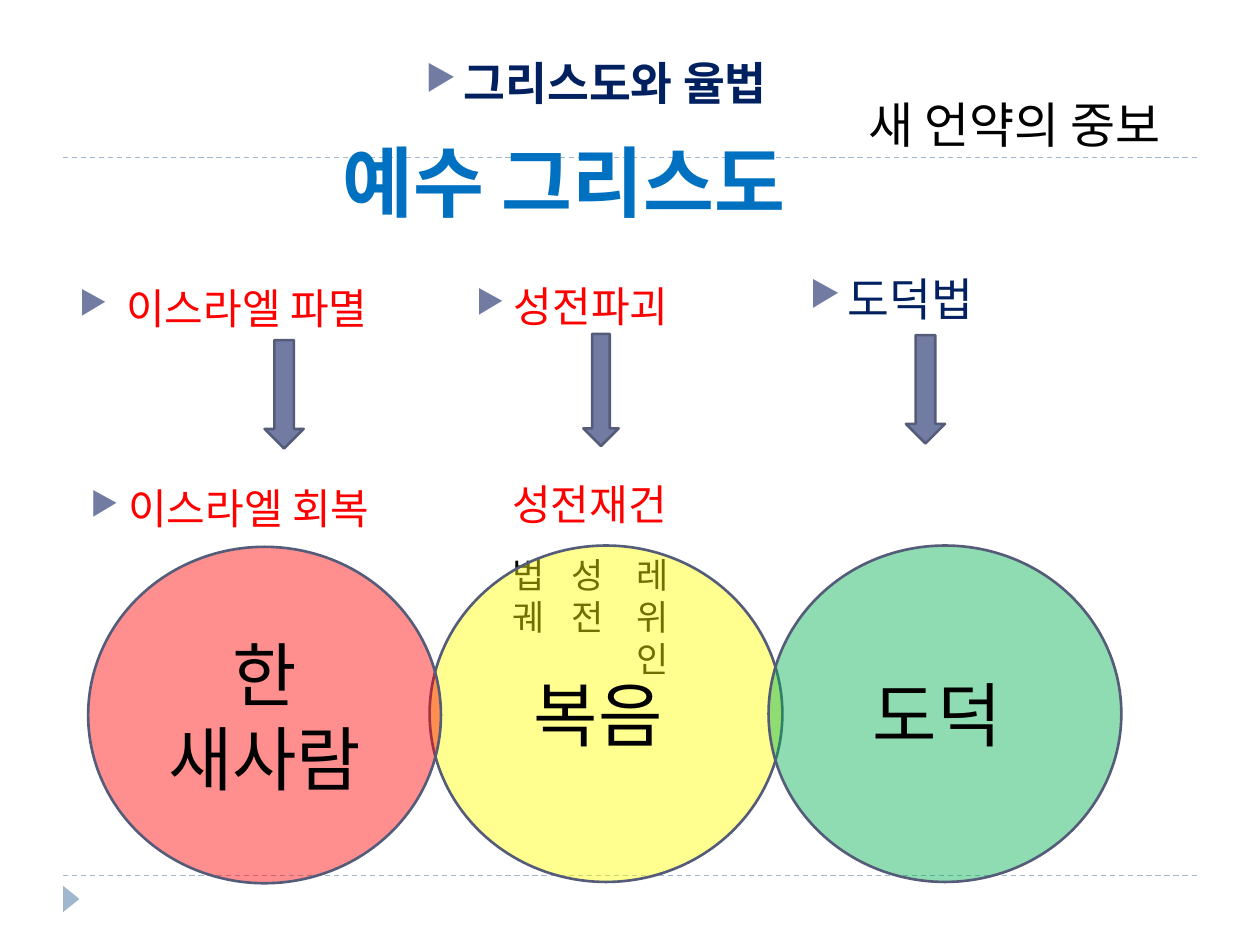
"""Builds a slide on Christ and the law: three changes leading to three overlapping circles."""
from dataclasses import dataclass

from lxml import etree
from pptx import Presentation
from pptx.dml.color import RGBColor
from pptx.enum import dml, shapes, text
from pptx.oxml.ns import qn
from pptx.util import Inches, Pt

FONT = "Calibri"
SLATE, EDGE, PALE = "727CA3", "545C79", "9FB8CD"
NAVY, RED, BLACK, BLUE = "002060", "FF0000", "000000", "0070C0"
CIRCLE_SIZE = (2.8, 2.67)


@dataclass
class Label:
    wording: str
    box: tuple[float, float, float, float]
    size: float
    color: str
    bold: bool = False
    bullet: bool = False
    centered: bool = False
    spacing: float | None = None
    before: float = 0


@dataclass
class Arrow:
    left: float
    top: float
    width: float
    height: float


@dataclass
class Circle:
    wording: str
    left: float
    top: float
    color: str


LABELS = [
    Label("그리스도와 율법", (3.28, 0.39, 3.75, 0.62), 26, NAVY, bold=True, bullet=True, before=6),
    Label("도덕법", (6.33, 2.1, 1.95, 0.62), 26, NAVY, bullet=True, before=6),
    Label("이스라엘 회복", (0.62, 3.78, 2.66, 0.47), 24, RED, bullet=True, before=6),
    Label("성전재건", (3.43, 3.79, 2.5, 0.47), 24, RED, centered=True, spacing=0.9, before=6),
    Label(" 이스라엘 파멸", (0.53, 2.19, 2.81, 0.47), 24, RED, bullet=True, before=6),
    Label("성전파괴", (3.68, 2.18, 2.66, 0.47), 24, RED, bullet=True, before=6),
    Label("법궤", (3.97, 4.34, 0.47, 0.77), 20, BLACK),
    Label("성전", (4.44, 4.34, 0.47, 0.77), 20, BLACK),
    Label("레위인", (4.95, 4.34, 0.63, 1.11), 20, BLACK),
    Label("예수 그리스도", (2.62, 1.02, 4.22, 0.84), 44, BLUE, bold=True),
    Label("새 언약의 중보", (6.57, 0.7, 2.97, 0.57), 28, BLACK, centered=True),
]
ARROWS = [
    Arrow(2.1, 2.7, 0.31, 0.86),
    Arrow(4.63, 2.65, 0.28, 0.89),
    Arrow(7.19, 2.66, 0.31, 0.86),
]
CIRCLES = [
    Circle("복음 ", 3.41, 4.33, "FFFF00"),
    Circle("도덕 ", 6.1, 4.33, "00B050"),
    Circle("한 새사람", 0.7, 4.34, "FF0000"),
]


def rgb(code: str) -> RGBColor:
    """Turn a hex string into a colour."""
    return RGBColor.from_string(code)


def style_paragraph(paragraph, size: float, color: str, bold: bool = False) -> None:
    """Set the font of a whole paragraph."""
    font = paragraph.font
    font.name, font.size, font.bold = FONT, Pt(size), bold
    font.color.rgb = rgb(color)


def add_bullet(paragraph) -> None:
    """Give a paragraph a hanging slate triangle bullet."""
    properties = paragraph._p.get_or_add_pPr()
    properties.set("marL", str(Inches(0.3)))
    properties.set("indent", str(Inches(-0.3)))
    color = etree.Element(qn("a:buClr"))
    etree.SubElement(color, qn("a:srgbClr"), val=SLATE)
    size = etree.Element(qn("a:buSzPct"), val="76000")
    mark = etree.Element(qn("a:buChar"), char="▶")
    for offset, part in enumerate((color, size, mark)):
        properties.insert(len(properties.findall(qn("a:spcBef"))) + offset, part)


def add_label(slide, label: Label) -> None:
    """Draw one text label."""
    frame = slide.shapes.add_textbox(*map(Inches, label.box)).text_frame
    frame.word_wrap = True
    paragraph = frame.paragraphs[0]
    paragraph.text = label.wording
    paragraph.space_before = Pt(label.before)
    if label.spacing:
        paragraph.line_spacing = label.spacing
    if label.centered:
        paragraph.alignment = text.PP_ALIGN.CENTER
    if label.bullet:
        add_bullet(paragraph)
    style_paragraph(paragraph, label.size, label.color, label.bold)


def add_filled(slide, kind, box: tuple[float, float, float, float], fill: str, edge: str | None = EDGE):
    """Draw a preset shape with a flat fill and an optional edge."""
    shape = slide.shapes.add_shape(kind, *map(Inches, box))
    shape.shadow.inherit = False
    shape.fill.solid()
    shape.fill.fore_color.rgb = rgb(fill)
    if edge:
        shape.line.color.rgb = rgb(edge)
        shape.line.width = Pt(1.5)
    else:
        shape.line.fill.background()
    return shape


def add_circle(slide, circle: Circle) -> None:
    """Draw a translucent circle with its centred word."""
    box = (circle.left, circle.top, *CIRCLE_SIZE)
    shape = add_filled(slide, shapes.MSO_SHAPE.OVAL, box, circle.color)
    tint = shape.fill._xPr.find(qn("a:solidFill")).find(qn("a:srgbClr"))
    etree.SubElement(tint, qn("a:alpha"), val="44000")
    frame = shape.text_frame
    frame.word_wrap = True
    frame.vertical_anchor = text.MSO_ANCHOR.MIDDLE
    paragraph = frame.paragraphs[0]
    paragraph.text = circle.wording
    paragraph.alignment = text.PP_ALIGN.CENTER
    style_paragraph(paragraph, 40, BLACK)


def add_rule(slide, top: float) -> None:
    """Draw a dashed rule across the slide."""
    ends = map(Inches, (0.5, top, 9.5, top))
    rule = slide.shapes.add_connector(shapes.MSO_CONNECTOR.STRAIGHT, *ends)
    rule.line.color.rgb = rgb(PALE)
    rule.line.width = Pt(0.75)
    rule.line.dash_style = dml.MSO_LINE.DASH
    etree.SubElement(rule._element.spPr, qn("a:effectLst"))


def main() -> None:
    """Build and save the slide."""
    deck = Presentation()
    deck.slide_width, deck.slide_height = Inches(10), Inches(7.5)
    slide = deck.slides.add_slide(deck.slide_layouts[6])
    for top in (6.95, 1.25):
        add_rule(slide, top)
    corner = add_filled(slide, shapes.MSO_SHAPE.ISOSCELES_TRIANGLE, (0.46, 7.07, 0.21, 0.13), PALE, None)
    corner.rotation = 90
    for label in LABELS:
        add_label(slide, label)
    for arrow in ARROWS:
        box = (arrow.left, arrow.top, arrow.width, arrow.height)
        add_filled(slide, shapes.MSO_SHAPE.DOWN_ARROW, box, SLATE)
    for circle in CIRCLES:
        add_circle(slide, circle)
    deck.save("out.pptx")


if __name__ == "__main__":
    main()
